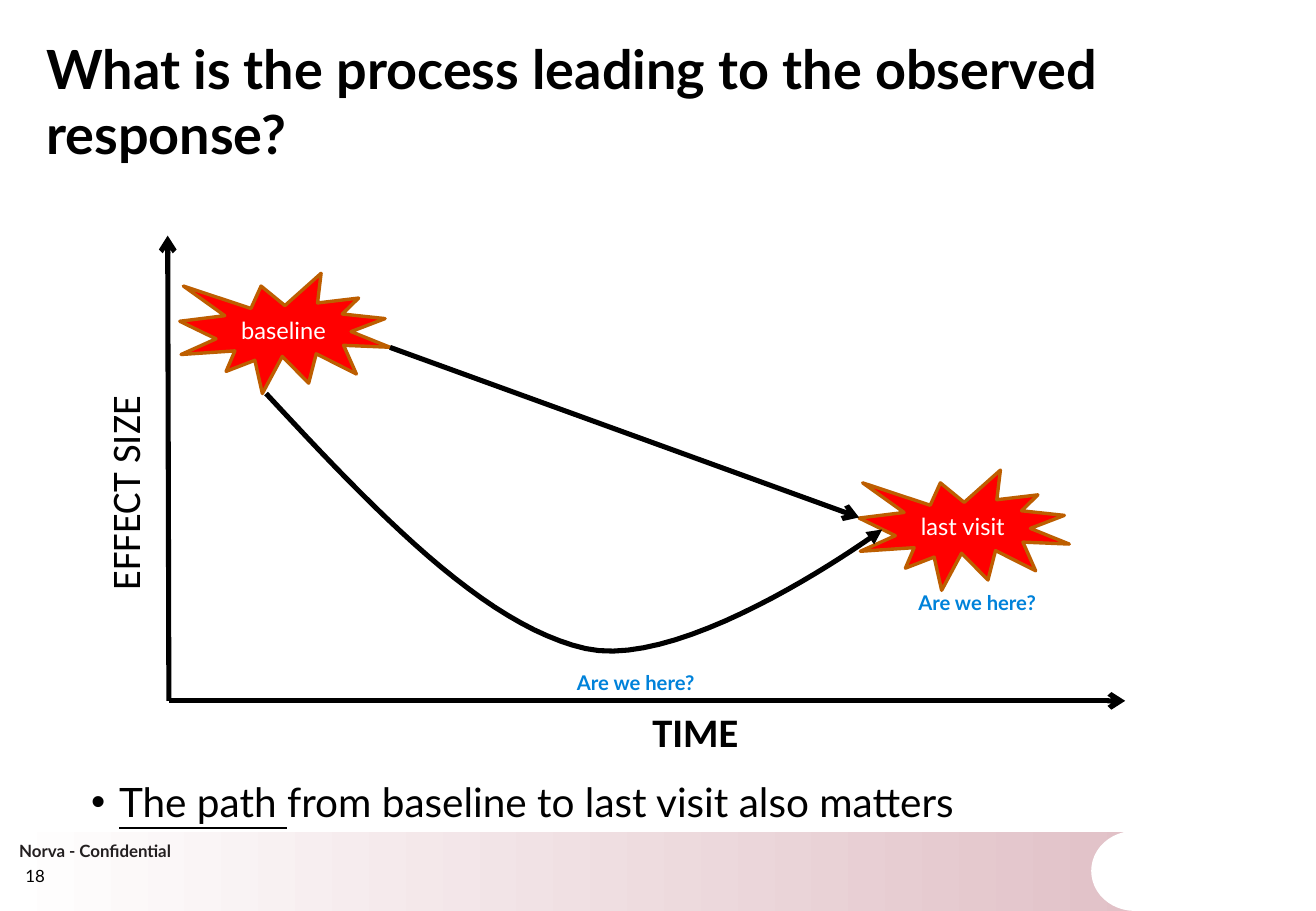
"""Build a slide charting two possible paths from baseline to last visit."""
from dataclasses import dataclass

from lxml import etree
from pptx import Presentation, util as u
from pptx.dml.color import RGBColor
from pptx.enum import shapes, text
from pptx.oxml.ns import qn

PX = u.Inches(1) // 100
SEAL_SIZE = (173, 99)
CURVE_STEPS = 24

Point = tuple[float, float]
Box = tuple[int, int, int, int]


@dataclass(frozen=True)
class Theme:
    font: str = "Lato"
    axis_font: str = "Calibri"
    black: str = "000000"
    white: str = "FFFFFF"
    rose: str = "E1C1C7"
    footer: str = "231F20"
    red: str = "FF0000"
    brown: str = "BD5E00"
    blue: str = "0082DA"
    title: int = 32
    body: int = 24
    seal: int = 14
    question: int = 12
    small: int = 10
    stroke: int = 3
    outline: int = 2


THEME = Theme()


@dataclass(frozen=True)
class Label:
    text: str
    box: Box
    size: int
    color: str = THEME.black
    font: str = THEME.font
    bold: bool = False
    vertical: bool = False


@dataclass(frozen=True)
class Seal:
    text: str
    left: int
    top: int


@dataclass(frozen=True)
class Arrow:
    start: tuple[int, int]
    end: tuple[int, int]


LABELS = [
    Label("Norva - Confidential", (6, 687, 155, 27), THEME.small, THEME.footer, bold=True),
    Label("EFFECT SIZE", (77, 324, 61, 172), THEME.body, font=THEME.axis_font, vertical=True),
    Label("TIME", (527, 577, 92, 50), THEME.body, font=THEME.axis_font, bold=True),
    Label("Are we here?", (465, 547, 124, 30), THEME.question, THEME.blue, bold=True),
    Label("Are we here?", (746, 481, 124, 30), THEME.question, THEME.blue, bold=True),
]
SEALS = [Seal("baseline", 148, 225), Seal("last visit", 707, 387)]
ARROWS = [
    Arrow((139, 577), (138, 194)),
    Arrow((139, 577), (926, 577)),
    Arrow((321, 286), (707, 426)),
]
CURVE = [
    ((219, 324), (308, 420), (398, 515), (482, 534)),
    ((482, 534), (567, 553), (726, 436), (726, 436)),
]


def rgb(color: str) -> RGBColor:
    return RGBColor.from_string(color)


def emu(box: Box) -> list[int]:
    return [n * PX for n in box]


def place(sp, box: Box) -> None:
    sp.left, sp.top, sp.width, sp.height = emu(box)


def style(font, size: int, color: str = THEME.black, name: str = THEME.font,
          bold: bool = False) -> None:
    font.name, font.size, font.bold = name, u.Pt(size), bold
    font.color.rgb = rgb(color)


def clear_margins(tf) -> None:
    tf.margin_left = tf.margin_top = tf.margin_right = tf.margin_bottom = 0


def add_arrowhead(sp, kind: str) -> None:
    etree.SubElement(sp.line._get_or_add_ln(), qn("a:tailEnd"), type=kind)


def stroke(sp) -> None:
    sp.line.color.rgb = rgb(THEME.black)
    sp.line.width = u.Pt(THEME.stroke)


def add_plain(s, kind: shapes.MSO_SHAPE, box: Box):
    sp = s.shapes.add_shape(kind, *emu(box))
    sp.shadow.inherit = False
    sp.line.fill.background()
    return sp


def add_footer_band(s) -> None:
    band = add_plain(s, shapes.MSO_SHAPE.RECTANGLE, (0, 685, 941, 65))
    band.fill.gradient()
    band.fill.gradient_angle = 0
    for stop, color in zip(band.fill.gradient_stops, (THEME.white, THEME.rose)):
        stop.color.rgb = rgb(color)
    notch = add_plain(s, shapes.MSO_SHAPE.FLOWCHART_DELAY, (898, 684, 72, 66))
    notch.fill.solid()
    notch.fill.fore_color.rgb = rgb(THEME.white)
    notch._element.spPr.find(qn("a:xfrm")).set("flipH", "1")


def add_label(s, label: Label) -> None:
    tf = s.shapes.add_textbox(*emu(label.box)).text_frame
    tf.word_wrap = False
    tf.text = label.text
    if label.vertical:
        tf._txBody.bodyPr.set("vert", "vert270")
    style(tf.paragraphs[0].runs[0].font, label.size, label.color, label.font, label.bold)


def add_seal(s, seal: Seal) -> None:
    sp = add_plain(s, shapes.MSO_SHAPE.EXPLOSION1, (seal.left, seal.top, *SEAL_SIZE))
    sp.fill.solid()
    sp.fill.fore_color.rgb = rgb(THEME.red)
    sp.line.color.rgb = rgb(THEME.brown)
    sp.line.width = u.Pt(THEME.outline)
    tf = sp.text_frame
    tf.text = seal.text
    tf.vertical_anchor = text.MSO_ANCHOR.MIDDLE
    p = tf.paragraphs[0]
    p.alignment = text.PP_ALIGN.CENTER
    style(p.runs[0].font, THEME.seal, THEME.white)


def add_arrow(s, arrow: Arrow) -> None:
    sp = s.shapes.add_connector(shapes.MSO_CONNECTOR.STRAIGHT,
                                *emu((*arrow.start, *arrow.end)))
    stroke(sp)
    add_arrowhead(sp, "arrow")
    etree.SubElement(sp._element.spPr, qn("a:effectLst"))


def bezier(controls: tuple[Point, ...], t: float) -> Point:
    weights = ((1 - t) ** 3, 3 * t * (1 - t) ** 2, 3 * t ** 2 * (1 - t), t ** 3)
    x, y = (sum(w * c for w, c in zip(weights, axis)) for axis in zip(*controls))
    return x, y


def add_curve(s) -> None:
    points = [bezier(part, i / CURVE_STEPS) for part in CURVE
              for i in range(1, CURVE_STEPS + 1)]
    builder = s.shapes.build_freeform(*emu((*CURVE[0][0], 0, 0))[:2])
    builder.add_line_segments([(round(x * PX), round(y * PX)) for x, y in points],
                              close=False)
    sp = builder.convert_to_shape()
    sp.shadow.inherit = False
    sp.fill.background()
    stroke(sp)
    add_arrowhead(sp, "triangle")


def fill_title(sp) -> None:
    place(sp, (38, 29, 929, 143))
    tf = sp.text_frame
    tf.text = "What is the process leading to the observed response?"
    tf.vertical_anchor = text.MSO_ANCHOR.TOP
    tf.auto_size = text.MSO_AUTO_SIZE.NONE
    clear_margins(tf)
    p = tf.paragraphs[0]
    p.alignment = text.PP_ALIGN.LEFT
    style(p.runs[0].font, THEME.title, bold=True)


def fill_body(sp) -> None:
    place(sp, (65, 635, 858, 50))
    tf = sp.text_frame
    tf.auto_size = text.MSO_AUTO_SIZE.NONE
    p = tf.paragraphs[0]
    p.space_before = u.Pt(0)
    pPr = p._p.get_or_add_pPr()
    pPr.set("marL", str(23 * PX))
    pPr.set("indent", str(-23 * PX))
    etree.SubElement(pPr, qn("a:buFont"), typeface="Arial")
    etree.SubElement(pPr, qn("a:buChar"), char="•")
    for words, underline in (("The path ", True),
                             ("from baseline to last visit also matters", False)):
        r = p.add_run()
        r.text = words
        style(r.font, THEME.body)
        r.font.underline = underline


def add_page_number(s) -> None:
    tf = s.shapes.add_textbox(*emu((21, 708, 48, 21))).text_frame
    tf.text = "18"
    tf.word_wrap = True
    tf.vertical_anchor = text.MSO_ANCHOR.BOTTOM
    clear_margins(tf)
    style(tf.paragraphs[0].runs[0].font, THEME.small)


def main() -> None:
    prs = Presentation()
    prs.slide_width, prs.slide_height = 1083 * PX, 750 * PX
    s = prs.slides.add_slide(prs.slide_layouts[1])
    fill_title(s.shapes.title)
    fill_body(s.placeholders[1])
    add_footer_band(s)
    add_page_number(s)
    for seal in SEALS:
        add_seal(s, seal)
    for arrow in ARROWS:
        add_arrow(s, arrow)
    add_curve(s)
    for label in LABELS:
        add_label(s, label)
    prs.save("out.pptx")


if __name__ == "__main__":
    main()
